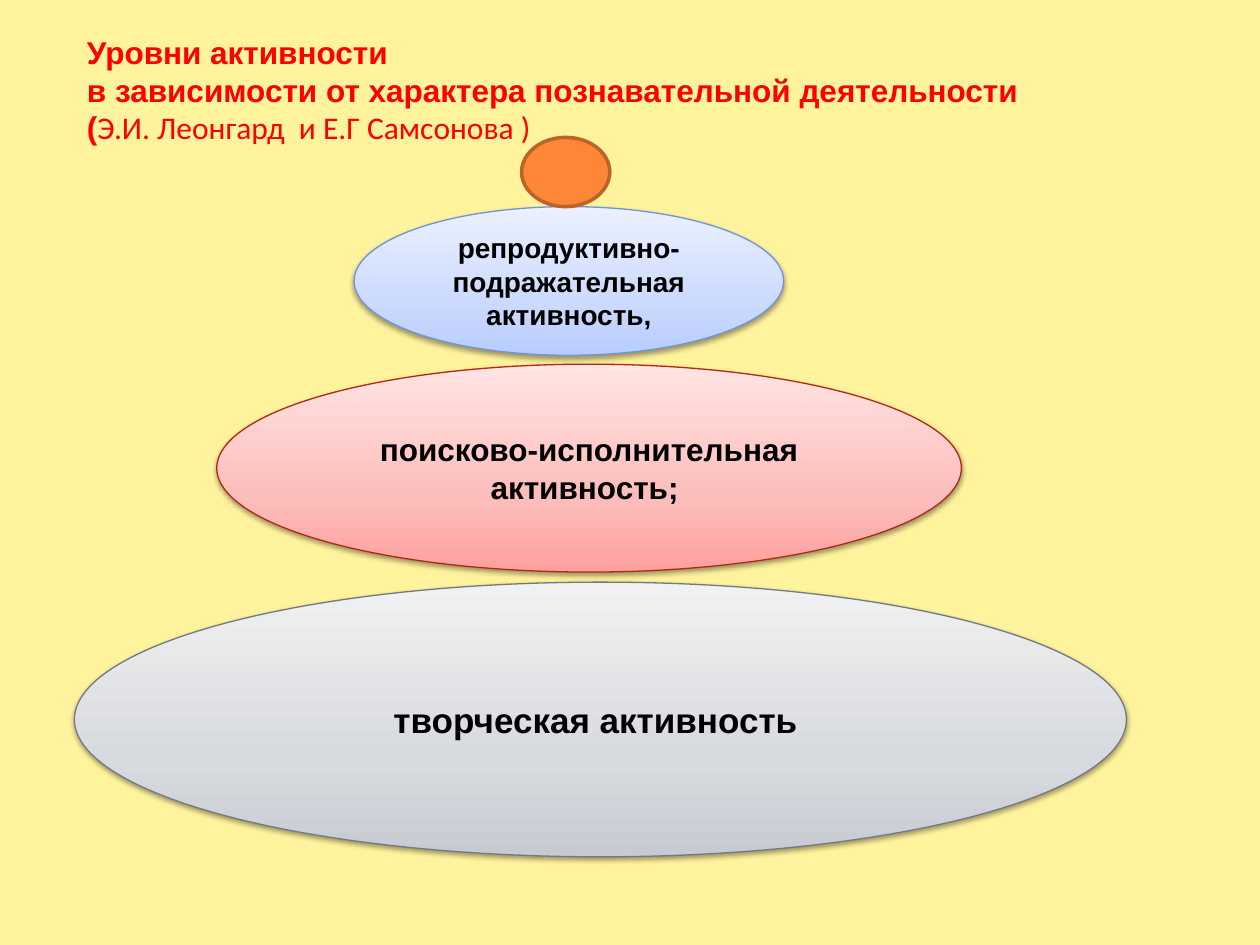
from dataclasses import dataclass

from lxml.etree import SubElement
from pptx import Presentation
from pptx.dml.color import RGBColor
from pptx.enum.shapes import MSO_SHAPE
from pptx.enum.text import MSO_ANCHOR, MSO_AUTO_SIZE, PP_ALIGN
from pptx.oxml.ns import qn
from pptx.util import Inches, Pt

BACKGROUND = RGBColor(0xFF, 0xF3, 0x9D)
RED = RGBColor(0xFF, 0x00, 0x00)
BLACK = RGBColor(0x00, 0x00, 0x00)
ORANGE = RGBColor(0xFE, 0x86, 0x37)
DARK_ORANGE = RGBColor(0xBC, 0x63, 0x29)
BLUES = (RGBColor(0xB8, 0xCC, 0xFF), RGBColor(0xCC, 0xDA, 0xFF), RGBColor(0xEB, 0xF1, 0xFF))
BLUE_LINE = RGBColor(0x70, 0x94, 0xD7)
REDS = (RGBColor(0xFE, 0xA0, 0x9D), RGBColor(0xFD, 0xBD, 0xBB), RGBColor(0xFF, 0xE5, 0xE4))
RED_LINE = RGBColor(0xB3, 0x28, 0x12)
GREYS = (RGBColor(0xC7, 0xCB, 0xD1), RGBColor(0xD7, 0xDA, 0xDE), RGBColor(0xF0, 0xF1, 0xF3))
GREY_LINE = RGBColor(0x74, 0x79, 0x81)
STOPS = (0, 35, 100)


@dataclass
class Level:
    text: str
    box: tuple[float, float, float, float]
    size: int
    colors: tuple[RGBColor, RGBColor, RGBColor]
    line: RGBColor


LEVELS = [
    Level("репродуктивно-подражательная активность,", (2.81, 1.64, 3.41, 1.18), 16, BLUES, BLUE_LINE),
    Level("поисково-исполнительная активность; ", (1.72, 2.89, 5.91, 1.65), 18, REDS, RED_LINE),
    Level("творческая активность ", (0.59, 4.62, 8.35, 2.18), 20, GREYS, GREY_LINE),
]

TITLE = [
    [("Уровни активности", "Arial", True)],
    [("в зависимости от характера познавательной деятельности", "Arial", True)],
    [("(", "Arial", True), ("Э.И. Леонгард  и Е.Г Самсонова )", "Calibri", False)],
]


def add_text(p, text: str, *, size: float, color: RGBColor, font="Arial", bold=True) -> None:
    r = p.add_run()
    r.text = text
    r.font.size = Pt(size)
    r.font.name = font
    r.font.bold = bold
    r.font.color.rgb = color


def add_ellipse(slide, box: tuple, line: RGBColor, width: float):
    sp = slide.shapes.add_shape(MSO_SHAPE.OVAL, *map(Inches, box))
    sp.shadow.inherit = False
    sp.line.color.rgb = line
    sp.line.width = Pt(width)
    return sp


def set_gradient(sp, colors: tuple) -> None:
    """Fill from bottom to top through the three colours."""
    sp.fill.gradient()
    sp.fill.gradient_angle = 90
    stops = sp._element.spPr.find(".//" + qn("a:gsLst"))
    stops.clear()
    for pos, color in zip(STOPS, colors):
        gs = SubElement(stops, qn("a:gs"), pos=str(pos * 1000))
        SubElement(gs, qn("a:srgbClr"), val=str(color))


def add_shadow(sp) -> None:
    effects = sp._element.spPr.find(qn("a:effectLst"))
    shadow = SubElement(effects, qn("a:outerShdw"), blurRad=str(Pt(3.1)), dist=str(Pt(1.6)),
                        dir="5400000", rotWithShape="0")
    color = SubElement(shadow, qn("a:srgbClr"), val=str(BLACK))
    SubElement(color, qn("a:alpha"), val="38000")


def add_level(slide, level: Level) -> None:
    sp = add_ellipse(slide, level.box, level.line, 0.75)
    set_gradient(sp, level.colors)
    add_shadow(sp)
    tf = sp.text_frame
    tf.word_wrap = True
    tf.vertical_anchor = MSO_ANCHOR.MIDDLE
    p = tf.paragraphs[0]
    p.alignment = PP_ALIGN.CENTER
    add_text(p, level.text, size=level.size, color=BLACK)


def add_title(slide) -> None:
    title = slide.shapes.title
    title.left, title.top, title.width, title.height = map(Inches, (0.59, 0.21, 7.75, 1.01))
    tf = title.text_frame
    tf.word_wrap = False
    tf.auto_size = MSO_AUTO_SIZE.SHAPE_TO_FIT_TEXT
    tf.vertical_anchor = MSO_ANCHOR.TOP
    for i, runs in enumerate(TITLE):
        p = tf.add_paragraph() if i else tf.paragraphs[0]
        p.alignment = PP_ALIGN.LEFT
        for text, font, bold in runs:
            add_text(p, text, size=18, color=RED, font=font, bold=bold)


def main() -> None:
    prs = Presentation()
    prs.slide_width, prs.slide_height = Inches(10), Inches(7.5)
    slide = prs.slides.add_slide(prs.slide_layouts[5])
    slide.background.fill.solid()
    slide.background.fill.fore_color.rgb = BACKGROUND
    add_title(slide)
    for level in LEVELS:
        add_level(slide, level)
    top = add_ellipse(slide, (4.14, 1.09, 0.7, 0.55), DARK_ORANGE, 2)
    top.fill.solid()
    top.fill.fore_color.rgb = ORANGE
    prs.save("out.pptx")


if __name__ == "__main__":
    main()
